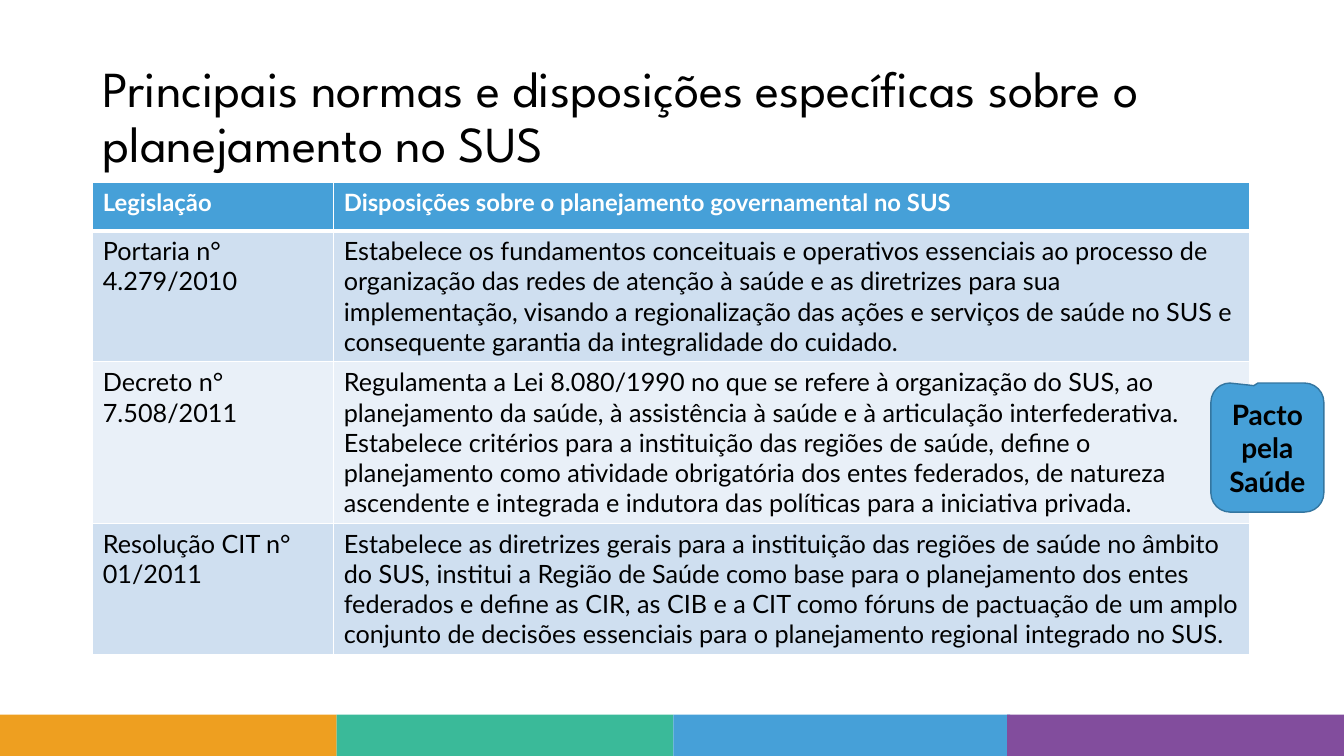
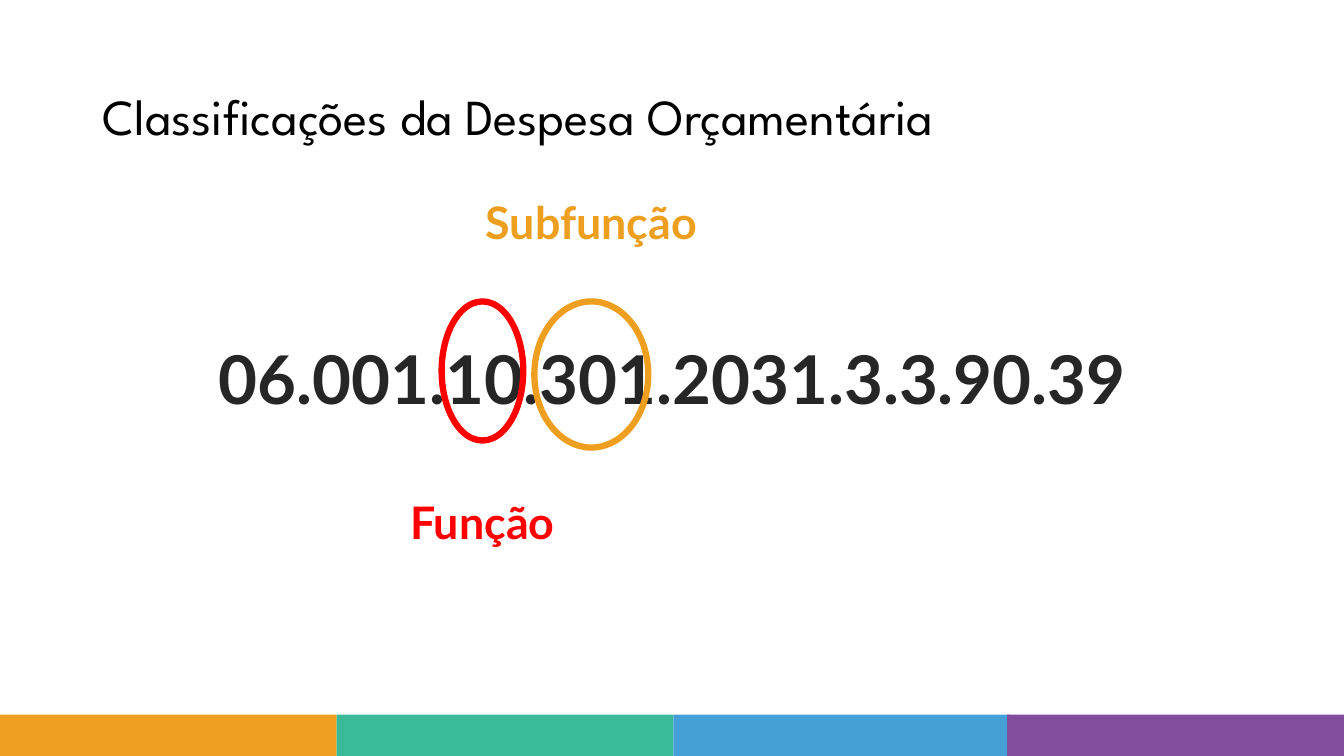
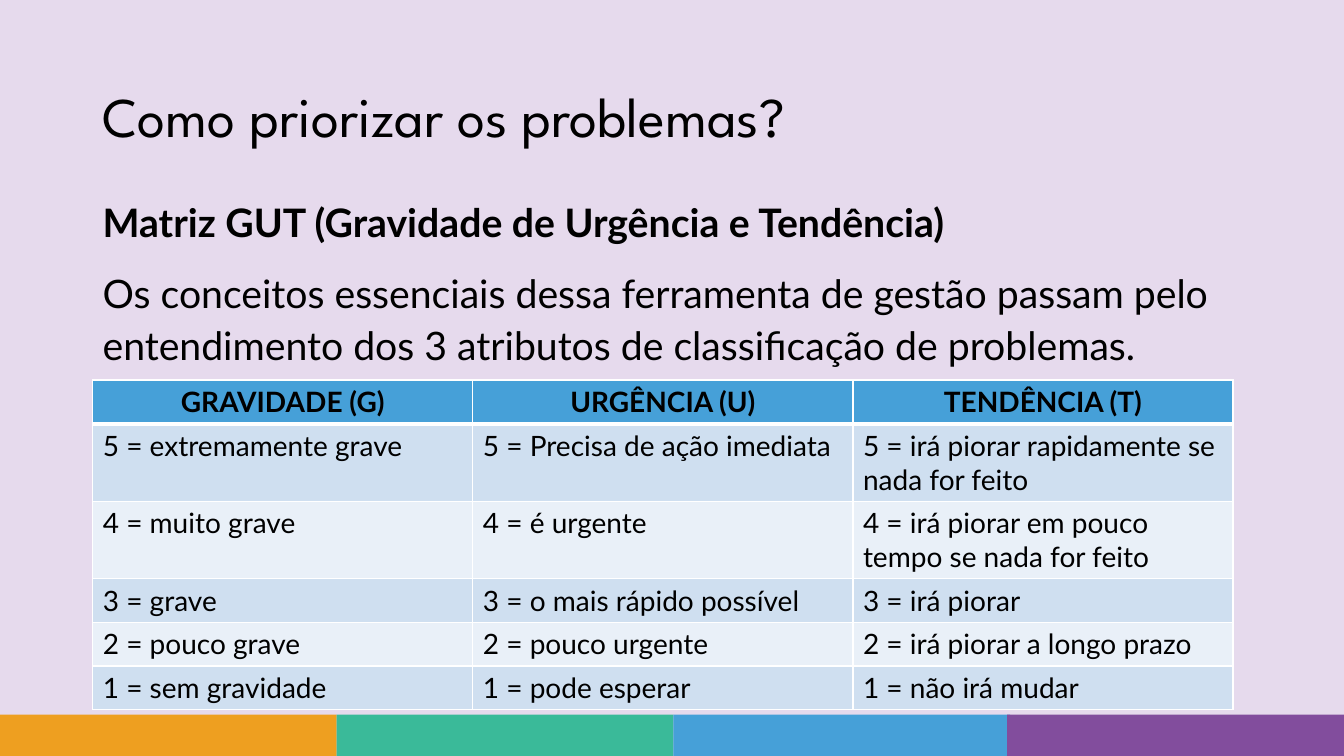
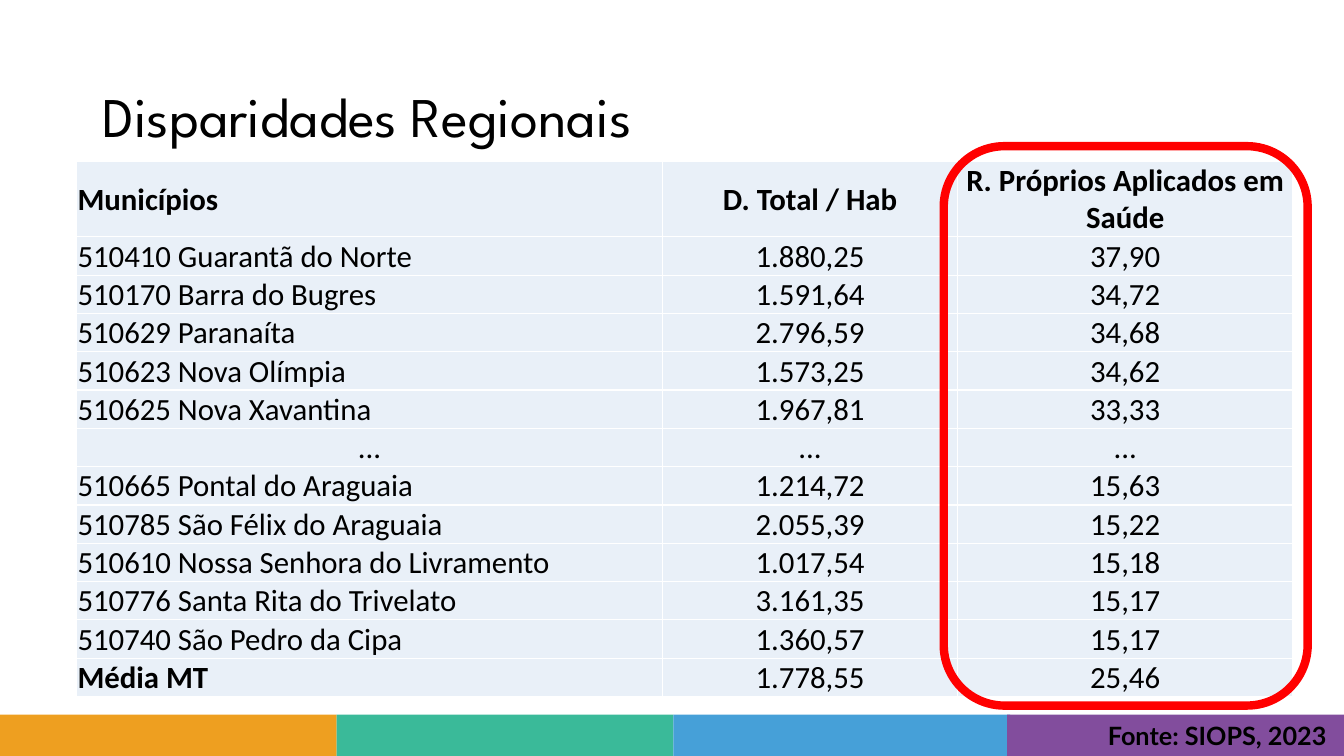
from dataclasses import dataclass

from lxml import etree
from pptx import Presentation
from pptx.dml.color import RGBColor
from pptx.enum.shapes import MSO_SHAPE
from pptx.enum.text import MSO_ANCHOR, PP_ALIGN
from pptx.oxml.ns import qn
from pptx.shapes.autoshape import Shape
from pptx.slide import Slide
from pptx.table import Table
from pptx.text.text import _Paragraph
from pptx.util import Pt

RECT = MSO_SHAPE.RECTANGLE
OVAL = MSO_SHAPE.OVAL
ROUND = MSO_SHAPE.ROUNDED_RECTANGLE
CALLOUT = MSO_SHAPE.ROUNDED_RECTANGULAR_CALLOUT
LEFT = PP_ALIGN.LEFT
CENTER = PP_ALIGN.CENTER
TOP = MSO_ANCHOR.TOP
MIDDLE = MSO_ANCHOR.MIDDLE

BLACK = RGBColor(0, 0, 0)
WHITE = RGBColor(255, 255, 255)
INK = RGBColor(0x26, 0x26, 0x26)
RED = RGBColor(255, 0, 0)
ORANGE = RGBColor(0xEE, 0x9F, 0x20)
GREEN = RGBColor(0x3A, 0xBA, 0x99)
BLUE = RGBColor(0x46, 0xA0, 0xD8)
NAVY = RGBColor(0x34, 0x76, 0xA0)
PURPLE = RGBColor(0x82, 0x4D, 0x9D)
LILAC = RGBColor(0xE6, 0xDA, 0xED)
SKY = RGBColor(0xCF, 0xDF, 0xF0)
PALE = RGBColor(0xE9, 0xF0, 0xF8)

UNIT = 9144
WIDE, HIGH = 1333, 750
BAND_W, BAND_H = 334, 41
BANDS = (ORANGE, GREEN, BLUE, PURPLE)


@dataclass(frozen=True)
class Box:
    x: int
    y: int
    w: int
    h: int

    def emu(self) -> tuple[int, int, int, int]:
        return px(self.x), px(self.y), px(self.w), px(self.h)


@dataclass(frozen=True)
class Style:
    size: int
    color: RGBColor = BLACK
    bold: bool = False
    face: str = "Lato"
    align: PP_ALIGN = LEFT
    space: float = 1.0
    after: int = 0


@dataclass(frozen=True)
class Grid:
    x: int
    y: int
    cols: tuple[int, ...]
    rows: tuple[int, ...]
    head: Style
    body: tuple[Style, ...]
    fill: RGBColor
    tints: tuple[RGBColor, ...]
    rule: int = 3
    tight: bool = False


@dataclass(frozen=True)
class Ring:
    kind: MSO_SHAPE
    box: Box
    color: RGBColor
    width: float


@dataclass(frozen=True)
class Note:
    text: str
    box: Box
    style: Style


def px(n: int) -> int:
    return n * UNIT


def put(par: _Paragraph, text: str, style: Style) -> None:
    par.text = text
    par.alignment = style.align
    par.line_spacing = style.space
    par.space_after = Pt(style.after)
    font = par.font
    font.name = style.face
    font.size = Pt(style.size)
    font.bold = style.bold
    font.color.rgb = style.color


def write(slide: Slide, box: Box, lines: list[tuple[str, Style]],
          anchor: MSO_ANCHOR = TOP) -> None:
    frame = slide.shapes.add_textbox(*box.emu()).text_frame
    frame.word_wrap = True
    frame.vertical_anchor = anchor
    for i, (text, style) in enumerate(lines):
        put(frame.add_paragraph() if i else frame.paragraphs[0], text, style)


def block(slide: Slide, kind: MSO_SHAPE, box: Box, fill: RGBColor) -> Shape:
    shape = slide.shapes.add_shape(kind, *box.emu())
    shape.shadow.inherit = False
    shape.fill.solid()
    shape.fill.fore_color.rgb = fill
    shape.line.fill.background()
    return shape


def ring(slide: Slide, item: Ring) -> None:
    shape = slide.shapes.add_shape(item.kind, *item.box.emu())
    shape.shadow.inherit = False
    shape.fill.background()
    shape.line.color.rgb = item.color
    shape.line.width = Pt(item.width)


def page(deck: Presentation, title: str, size: int, back: RGBColor = WHITE) -> Slide:
    slide = deck.slides.add_slide(deck.slide_layouts[6])
    slide.background.fill.solid()
    slide.background.fill.fore_color.rgb = back
    for i, color in enumerate(BANDS):
        left = min(i * BAND_W, WIDE - BAND_W)
        block(slide, RECT, Box(left, HIGH - BAND_H, BAND_W, BAND_H), color)
    style = Style(size, face="League Spartan", space=0.9)
    write(slide, Box(92, 65, 1130, 106), [(title, style)], MIDDLE)
    return slide


def edge(cell, sides: dict[str, int]) -> None:
    props = cell._tc.get_or_add_tcPr()
    for i, (side, width) in enumerate(sides.items()):
        line = etree.Element(qn(f"a:ln{side}"), w=str(Pt(width)))
        fill = etree.SubElement(line, qn("a:solidFill"))
        etree.SubElement(fill, qn("a:srgbClr"), val=str(WHITE))
        props.insert(i, line)


def table(slide: Slide, grid: Grid, data: list[tuple[str, ...]]) -> Table:
    box = Box(grid.x, grid.y, sum(grid.cols), sum(grid.rows))
    tab = slide.shapes.add_table(len(data), len(grid.cols), *box.emu()).table
    tab.first_row = False
    tab.horz_banding = False
    for col, w in zip(tab.columns, grid.cols):
        col.width = px(w)
    for r, texts in enumerate(data):
        tab.rows[r].height = px(grid.rows[r])
        tint = grid.tints[(r - 1) % len(grid.tints)] if r else grid.fill
        for c, text in enumerate(texts):
            cell = tab.cell(r, c)
            style = grid.body[c] if r else grid.head
            put(cell.text_frame.paragraphs[0], text, style)
            cell.fill.solid()
            cell.fill.fore_color.rgb = tint
            edge(cell, {"L": 1, "R": 1, "T": grid.rule if r == 1 else 1,
                        "B": 1 if r else grid.rule})
            if grid.tight:
                cell.vertical_anchor = MIDDLE
                cell.margin_left = cell.margin_right = cell.margin_top = px(1)
                cell.margin_bottom = 0
    return tab


def norms(deck: Presentation) -> None:
    slide = page(deck, "Principais normas e disposições específicas sobre o planejamento no SUS", 36)
    grid = Grid(92, 181, (239, 908), (48, 130, 160, 130),
                Style(17, WHITE, True), (Style(18),) * 2, BLUE, (SKY, PALE))
    table(slide, grid, [
        ("Legislação", "Disposições sobre o planejamento governamental no SUS"),
        ("Portaria n° 4.279/2010",
         "Estabelece os fundamentos conceituais e operativos essenciais ao processo de "
         "organização das redes de atenção à saúde e as diretrizes para sua implementação, "
         "visando a regionalização das ações e serviços de saúde no SUS e consequente "
         "garantia da integralidade do cuidado."),
        ("Decreto n° 7.508/2011",
         "Regulamenta a Lei 8.080/1990 no que se refere à organização do SUS, ao "
         "planejamento da saúde, à assistência à saúde e à articulação interfederativa. "
         "Estabelece critérios para a instituição das regiões de saúde, define o "
         "planejamento como atividade obrigatória dos entes federados, de natureza "
         "ascendente e integrada e indutora das políticas para a iniciativa privada."),
        ("Resolução CIT n° 01/2011",
         "Estabelece as diretrizes gerais para a instituição das regiões de saúde no âmbito "
         "do SUS, institui a Região de Saúde como base para o planejamento dos entes "
         "federados e define as CIR, as CIB e a CIT como fóruns de pactuação de um amplo "
         "conjunto de decisões essenciais para o planejamento regional integrado no SUS."),
    ])
    pact = block(slide, CALLOUT, Box(1201, 380, 112, 128), BLUE)
    for i, value in enumerate((-0.12, -0.48, 0.17)):
        pact.adjustments[i] = value
    pact.line.color.rgb = NAVY
    pact.line.width = Pt(1)
    pact.text_frame.word_wrap = True
    pact.text_frame.vertical_anchor = MIDDLE
    put(pact.text_frame.paragraphs[0], "Pacto pela Saúde", Style(20, bold=True, align=CENTER))


def codes(deck: Presentation) -> None:
    slide = page(deck, "Classificações da Despesa Orçamentária", 36)

    def mark(size: int, color: RGBColor) -> Style:
        return Style(size, color, True, align=CENTER, space=1.1, after=14)

    notes = (
        Note("06.001.10.301.2031.3.3.90.39", Box(102, 322, 1130, 106), mark(48, INK)),
        Note("Função", Box(334, 481, 289, 67), mark(32, RED)),
        Note("Subfunção", Box(442, 183, 289, 67), mark(32, ORANGE)),
    )
    for note in notes:
        write(slide, note.box, [(note.text, note.style)])
    ring(slide, Ring(OVAL, Box(438, 299, 81, 138), RED, 4.5))
    ring(slide, Ring(OVAL, Box(530, 299, 113, 145), ORANGE, 4.5))


def matrix(deck: Presentation) -> None:
    slide = page(deck, "Como priorizar os problemas?", 40, LILAC)
    write(slide, Box(92, 187, 1130, 474), [
        ("Matriz GUT (Gravidade de Urgência e Tendência)",
         Style(28, bold=True, space=1.1, after=14)),
        ("Os conceitos essenciais dessa ferramenta de gestão passam pelo entendimento "
         "dos 3 atributos de classificação de problemas.", Style(28, space=1.1, after=14)),
    ])
    grid = Grid(92, 377, (377,) * 3, (43, 76, 76, 43, 43, 43),
                Style(20, bold=True, align=CENTER), (Style(20),) * 3, BLUE, (SKY, PALE))
    table(slide, grid, [
        ("GRAVIDADE (G)", "URGÊNCIA (U)", "TENDÊNCIA (T)"),
        ("5 = extremamente grave", "5 = Precisa de ação imediata",
         "5 = irá piorar rapidamente se nada for feito"),
        ("4 = muito grave", "4 = é urgente", "4 = irá piorar em pouco tempo se nada for feito"),
        ("3 = grave", "3 = o mais rápido possível", "3 = irá piorar"),
        ("2 = pouco grave", "2 = pouco urgente", "2 = irá piorar a longo prazo"),
        ("1 = sem gravidade", "1 = pode esperar", "1 = não irá mudar"),
    ])


def gaps(deck: Presentation) -> None:
    slide = page(deck, "Disparidades Regionais", 40)
    name = Style(22, face="Calibri")
    value = Style(22, face="Calibri", align=CENTER)
    head = Style(22, bold=True, face="Calibri", align=CENTER)
    data = [
        ("Municípios", "D. Total / Hab", "R. Próprios Aplicados em Saúde"),
        ("510410 Guarantã do Norte", "1.880,25", "37,90"),
        ("510170 Barra do Bugres", "1.591,64", "34,72"),
        ("510629 Paranaíta", "2.796,59", "34,68"),
        ("510623 Nova Olímpia", "1.573,25", "34,62"),
        ("510625 Nova Xavantina", "1.967,81", "33,33"),
        ("...", "...", "..."),
        ("510665 Pontal do Araguaia", "1.214,72", "15,63"),
        ("510785 São Félix do Araguaia", "2.055,39", "15,22"),
        ("510610 Nossa Senhora do Livramento", "1.017,54", "15,18"),
        ("510776 Santa Rita do Trivelato", "3.161,35", "15,17"),
        ("510740 São Pedro da Cipa", "1.360,57", "15,17"),
        ("Média MT", "1.778,55", "25,46"),
    ]
    grid = Grid(76, 160, (581, 293, 332), (75,) + (38,) * 12, head,
                (name, value, value), PALE, (PALE,), 1, True)
    tab = table(slide, grid, data)
    first = [tab.cell(r, 0).text_frame.paragraphs[0] for r in range(len(data))]
    first[0].alignment = LEFT
    first[6].alignment = CENTER
    first[-1].font.bold = True
    ring(slide, Ring(ROUND, Box(936, 145, 361, 555), RED, 6))
    write(slide, Box(1089, 710, 244, 40), [("Fonte: SIOPS, 2023", Style(18, bold=True))])


def main() -> None:
    deck = Presentation()
    deck.slide_width = px(WIDE)
    deck.slide_height = px(HIGH)
    for build in (norms, codes, matrix, gaps):
        build(deck)
    deck.save("out.pptx")


if __name__ == "__main__":
    main()
